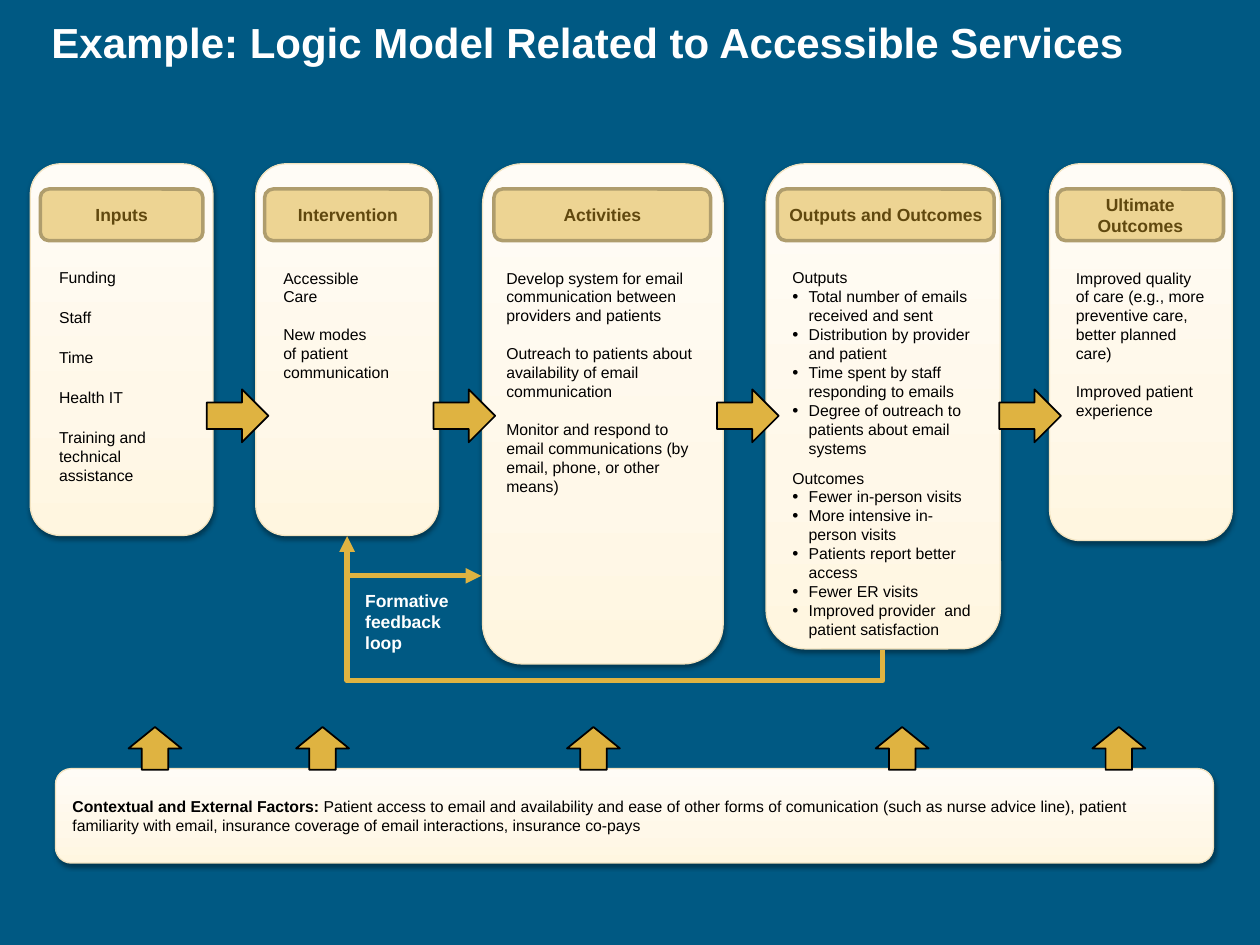
import pptx
import pptx.dml.color
import pptx.enum.shapes
import pptx.enum.text
import pptx.oxml
import pptx.oxml.ns
import pptx.util

COLUMNS, ROWS = 100, 75
SHAPES = pptx.enum.shapes.MSO_SHAPE
CONNECTORS = pptx.enum.shapes.MSO_CONNECTOR
ANCHOR = pptx.enum.text.MSO_ANCHOR
ALIGN = pptx.enum.text.PP_ALIGN
NAMESPACE = pptx.oxml.ns.nsdecls("a")

NAVY, GOLD, SAND, BRONZE = "005983", "DFB341", "EDD493", "AF9D6D"
BROWN, CREAM, BLACK, WHITE = "60480F", "F2E3C0", "000000", "FFFFFF"
GRADIENT = [(0, "FFF6E0"), (35, "FFF8E9"), (100, "FFFCF6")]

BODY = {"size": pptx.util.Pt(9), "bold": False, "color": BLACK}
STRONG = {**BODY, "bold": True}
HEADING = {"size": pptx.util.Pt(10), "bold": True, "color": BROWN}
FEEDBACK = {**HEADING, "color": WHITE}
TITLE = {**FEEDBACK, "size": pptx.util.Pt(24)}

LINE_GAP = {"space_before": pptx.util.Pt(10.8)}
ITEM_GAP = {"space_after": pptx.util.Pt(12)}
GROUP_GAP = {"space_before": pptx.util.Pt(6)}
CENTERED = {"alignment": ALIGN.CENTER}


def color(text):
    return pptx.dml.color.RGBColor.from_string(text)


def apply(target, values):
    for name, value in values.items():
        setattr(target, name, value)


def plain(*texts, first=None, later=None):
    return [([(text, BODY)], (later if number else first) or {}, False)
            for number, text in enumerate(texts)]


def bullets(*texts):
    return [([(text, BODY)], {}, True) for text in texts]


class LogicModelPage:
    font = "Arial"

    def __init__(self, deck):
        self.page = deck.slides.add_slide(deck.slide_layouts[6])
        self.column = deck.slide_width / COLUMNS
        self.row = deck.slide_height / ROWS
        self.page.background.fill.solid()
        self.page.background.fill.fore_color.rgb = color(NAVY)

    def place(self, *lengths):
        units = (self.column, self.row) * 2
        return [round(length * unit) for length, unit in zip(lengths, units)]

    def outline(self, item, shade, width):
        item.line.color.rgb = color(shade)
        item.line.width = pptx.util.Pt(width)

    def add_paragraphs(self, frame, paragraphs):
        for number, (spans, spacing, bulleted) in enumerate(paragraphs):
            para = frame.add_paragraph() if number else frame.paragraphs[0]
            apply(para, {"alignment": ALIGN.LEFT, **spacing})
            if bulleted:
                self.bullet(para)
            for text, style in spans:
                for index, piece in enumerate(text.split("\n")):
                    if index:
                        para.add_line_break()
                    span = para.add_run()
                    span.text = piece
                    apply(span.font, {"name": self.font, "size": style["size"],
                                      "bold": style["bold"]})
                    span.font.color.rgb = color(style["color"])

    def bullet(self, para):
        properties = para._p.get_or_add_pPr()
        indent = pptx.util.Inches(0.13)
        properties.set("marL", str(indent))
        properties.set("indent", str(-indent))
        for tag in ('buSzPct val="110000"', 'buFont typeface="Arial"', 'buChar char="•"'):
            properties.append(pptx.oxml.parse_xml(f"<a:{tag.replace(' ', f' {NAMESPACE} ', 1)}/>"))

    def text(self, area, paragraphs):
        box = self.page.shapes.add_textbox(*self.place(*area))
        apply(box.text_frame, {"word_wrap": True,
                               "auto_size": pptx.enum.text.MSO_AUTO_SIZE.SHAPE_TO_FIT_TEXT})
        self.add_paragraphs(box.text_frame, paragraphs)

    def solid(self, kind, area, fill, line, width):
        box = self.page.shapes.add_shape(kind, *self.place(*area))
        box.shadow.inherit = False
        box.fill.solid()
        box.fill.fore_color.rgb = color(fill)
        self.outline(box, line, width)
        return box

    def card(self, area):
        box = self.solid(SHAPES.ROUNDED_RECTANGLE, area, CREAM, CREAM, 0.75)
        stops = "".join(f'<a:gs pos="{place * 1000}"><a:srgbClr val="{shade}"/></a:gs>'
                        for place, shade in GRADIENT)
        properties = box._element.spPr
        properties.replace(properties.find(pptx.oxml.ns.qn("a:solidFill")), pptx.oxml.parse_xml(
            f'<a:gradFill {NAMESPACE} rotWithShape="1"><a:gsLst>{stops}</a:gsLst>'
            '<a:lin ang="16200000" scaled="0"/></a:gradFill>'))
        properties.find(pptx.oxml.ns.qn("a:effectLst")).append(pptx.oxml.parse_xml(
            f'<a:outerShdw {NAMESPACE} blurRad="{pptx.util.Pt(3.1)}" dist="{pptx.util.Pt(1.6)}" '
            'dir="5400000" rotWithShape="0"><a:srgbClr val="000000"><a:alpha val="38000"/>'
            '</a:srgbClr></a:outerShdw>'))
        return box

    def header(self, left, width, label, margins):
        box = self.solid(SHAPES.ROUNDED_RECTANGLE, (left, 15, width, 4.1), SAND, BRONZE, 2)
        apply(box.text_frame, {"word_wrap": True, "vertical_anchor": ANCHOR.MIDDLE, **margins})
        self.add_paragraphs(box.text_frame, [([(label, HEADING)], CENTERED, False)])

    def arrow(self, area, rotation=0):
        self.solid(SHAPES.RIGHT_ARROW, area, GOLD, BLACK, 1).rotation = rotation

    def connector(self, kind, ends):
        link = self.page.shapes.add_connector(kind, *self.place(*ends))
        self.outline(link, GOLD, 3)
        link.line._get_or_add_ln().append(
            pptx.oxml.parse_xml(f'<a:tailEnd {NAMESPACE} type="triangle"/>'))
        link._element.spPr.append(pptx.oxml.parse_xml(f"<a:effectLst {NAMESPACE}/>"))
        return link

    def loop(self, source, target, area):
        link = self.connector(CONNECTORS.ELBOW, (0, 0, 1, 1))
        link.begin_connect(source, 2)
        link.end_connect(target, 2)
        apply(link, dict(zip(("left", "top", "width", "height"), self.place(*area))))
        frame = link._element.spPr.find(pptx.oxml.ns.qn("a:xfrm"))
        frame.attrib.pop("flipV", None)
        frame.set("rot", "5400000")
        frame.set("flipH", "1")
        geometry = link._element.spPr.find(pptx.oxml.ns.qn("a:prstGeom"))
        guides = geometry.find(pptx.oxml.ns.qn("a:avLst"))
        guides.append(pptx.oxml.parse_xml(f'<a:gd {NAMESPACE} name="adj1" fmla="val -27600"/>'))


STAGES = [
    ("Inputs", (2.4, 14.5, 29.5), (3.2, 12.9), (3.7, 11.9, 18.3), {},
     plain("Funding", "Staff", "Time", "Health IT", "Training and technical assistance",
           first=ITEM_GAP, later=ITEM_GAP)),
    ("Intervention", (20.3, 14.5, 29.5), (21, 13.2), (21.5, 12.4, 10.1), {},
     plain("Accessible\nCare", "New modes\nof patient communication", later=LINE_GAP)),
    ("Activities", (38.3, 19.1, 39.7), (39.2, 17.2), (39.2, 17.2, 19.2), {},
     plain("Develop system for email communication between providers and patients",
           "Outreach to patients about availability of email communication",
           "Monitor and respond to email communications (by email, phone, or other means)",
           later=LINE_GAP)),
    ("Outputs and Outcomes", (60.8, 18.6, 38.5), (61.7, 17.2), (61.9, 16.8, 30.6),
     {"margin_left": 0, "margin_right": 0},
     plain("Outputs")
     + bullets("Total number of emails received and sent",
               "Distribution by provider and patient",
               "Time spent by staff responding to emails",
               "Degree of outreach to patients about email systems")
     + plain("Outcomes", first=GROUP_GAP)
     + bullets("Fewer in-person visits", "More intensive in-person visits",
               "Patients report better access", "Fewer ER visits",
               "Improved provider  and patient satisfaction")),
    ("Ultimate Outcomes", (83.3, 14.5, 29.9), (83.9, 13.2), (84.4, 12.4, 13.1), {},
     plain("Improved quality of care (e.g., more preventive care, better planned care)",
           "Improved patient experience", later=LINE_GAP)),
]
FACTORS = (" Patient access to email and availability and ease of other forms of comunication "
           "(such as nurse advice line), patient familiarity with email, insurance coverage of "
           "email interactions, insurance co-pays")


def main():
    deck = pptx.Presentation()
    deck.slide_width, deck.slide_height = pptx.util.Inches(10), pptx.util.Inches(7.5)
    model = LogicModelPage(deck)
    model.text((3.1, 0.8, 94.5, 5), [
        ([("Example: Logic Model Related to Accessible Services", TITLE)], {}, False)])

    cards = {}
    for label, (left, width, height), heading, (inset, span, depth), margins, content in STAGES:
        cards[label] = model.card((left, 13, width, height))
        model.header(*heading, label, margins)
        model.text((inset, 20.8, span, depth), content)
    for left in (16.4, 34.4, 56.9, 79.3):
        model.arrow((left, 30.9, 4.9, 4.2))

    context = model.card((4.4, 61, 91.9, 7.5))
    apply(context.text_frame, {"word_wrap": True, "vertical_anchor": ANCHOR.MIDDLE})
    model.add_paragraphs(context.text_frame, [
        ([("Contextual and External Factors:", STRONG), (FACTORS, BODY)], {}, False)])
    for left in (10.6, 23.9, 45.4, 69.9, 87.1):
        model.arrow((left, 57.3, 3.4, 4.2), 270)

    model.text((28, 46.3, 10.8, 6.1), [
        ([(line, FEEDBACK)], {}, False) for line in ("Formative feedback", "loop")])
    model.loop(cards["Outputs and Outcomes"], cards["Intervention"], (44.3, 25.8, 9, 42.5))
    model.connector(CONNECTORS.STRAIGHT, (27.7, 45.7, 38.2, 45.7))
    deck.save("out.pptx")


if __name__ == "__main__":
    main()
